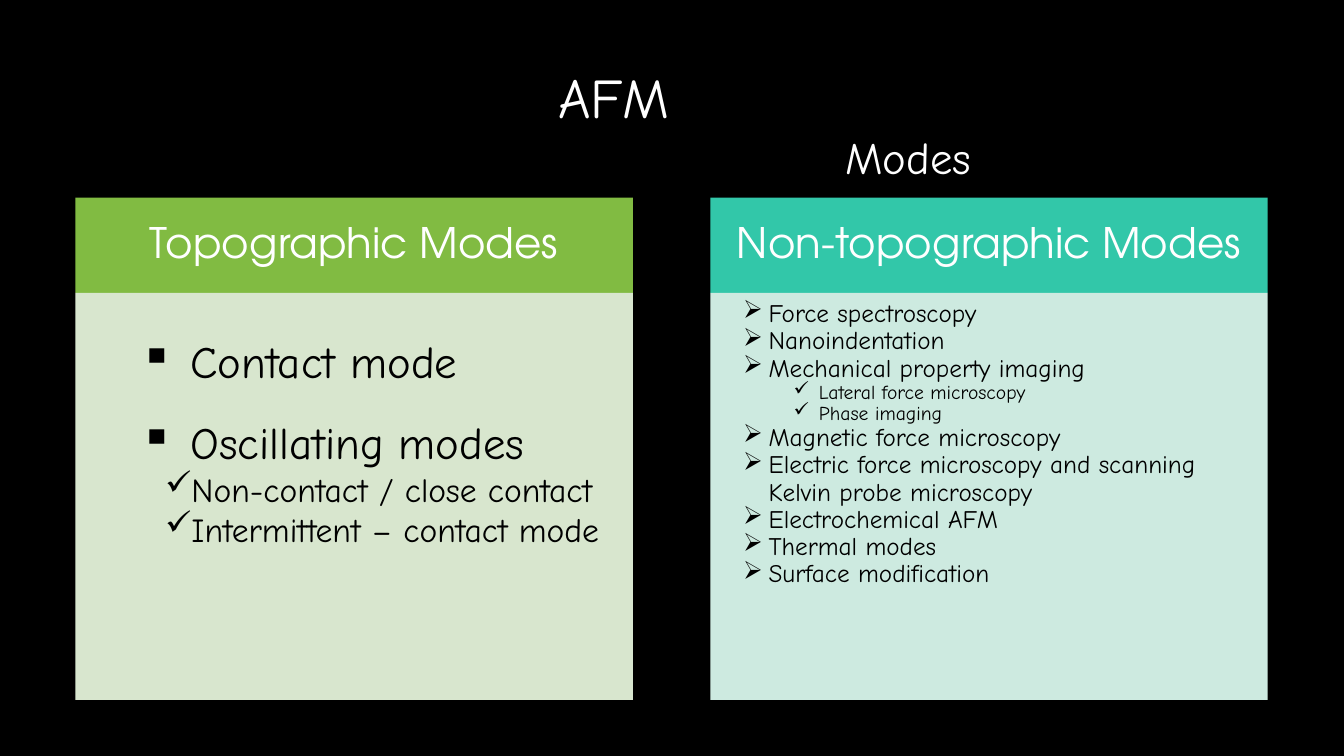
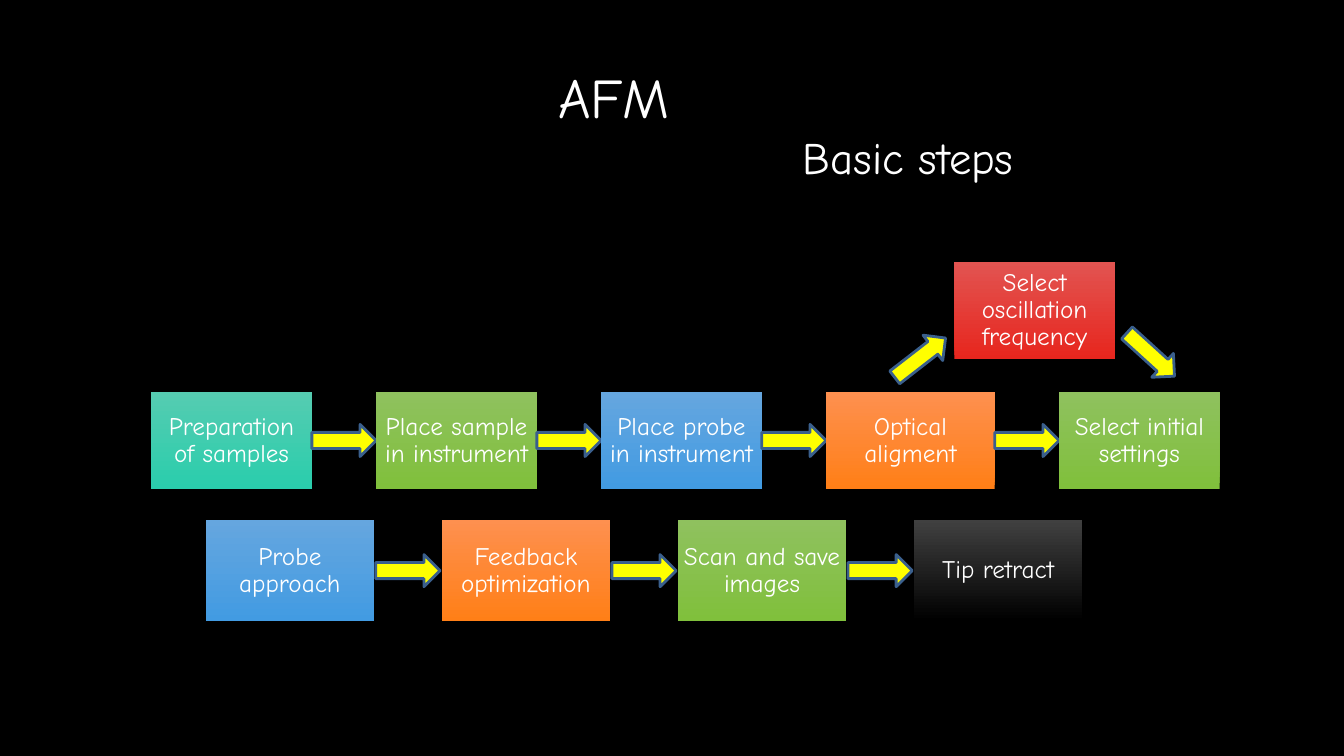
from lxml import etree
from pptx import Presentation
from pptx.dml.color import RGBColor
from pptx.enum.shapes import MSO_SHAPE
from pptx.enum.text import MSO_ANCHOR, PP_ALIGN
from pptx.oxml.ns import qn
from pptx.util import Cm, Pt

RECT, ARROW = MSO_SHAPE.RECTANGLE, MSO_SHAPE.RIGHT_ARROW
TOP, MIDDLE = MSO_ANCHOR.TOP, MSO_ANCHOR.MIDDLE
LEFT, CENTER = PP_ALIGN.LEFT, PP_ALIGN.CENTER

HAND, GEO = "Comic Neue", "TeX Gyre Adventor"

BLACK = RGBColor(0x00, 0x00, 0x00)
WHITE = RGBColor(0xFF, 0xFF, 0xFF)
YELLOW = RGBColor(0xFF, 0xFF, 0x00)
NAVY = RGBColor(0x3A, 0x5F, 0x8C)
LEAF = RGBColor(0x81, 0xBB, 0x42)
PALE_LEAF = RGBColor(0xD8, 0xE6, 0xCE)
MINT = RGBColor(0x32, 0xC7, 0xA9)
PALE_MINT = RGBColor(0xCD, 0xEA, 0xE0)

# Gradients run from the bottom colour to the top colour.
TEAL = RGBColor(0x2A, 0xCD, 0xAC), RGBColor(0x55, 0xCC, 0xB1)
GREEN = RGBColor(0x80, 0xC0, 0x3C), RGBColor(0x8F, 0xC1, 0x5E)
BLUE = RGBColor(0x42, 0x9B, 0xE2), RGBColor(0x65, 0xA6, 0xDF)
ORANGE = RGBColor(0xFF, 0x7F, 0x17), RGBColor(0xFE, 0x90, 0x4F)
RED = RGBColor(0xE7, 0x26, 0x1E), RGBColor(0xE2, 0x54, 0x51)
GREY = BLACK, RGBColor(0x40, 0x40, 0x40)

ARROW_W, ARROW_H = 1.62, 0.81


class Deck:
    def __init__(self):
        self.prs = Presentation()
        self.prs.slide_width, self.prs.slide_height = Cm(33.87), Cm(19.05)
        self.slide = None

    def start(self, topic):
        """Add a black slide with its two-line title."""
        self.slide = self.prs.slides.add_slide(self.prs.slide_layouts[6])
        fill = self.slide.background.fill
        fill.solid()
        fill.fore_color.rgb = BLACK
        box = self.slide.shapes.add_textbox(Cm(13.82), Cm(1.32), Cm(18.14), Cm(3.58))
        frame = self.frame(box, MIDDLE)
        self.para(frame, "AFM", 40, align=LEFT)
        self.para(frame, topic, 32)

    def frame(self, shape, anchor, insets=(0.25, 0.13, 0.25, 0.13)):
        frame = shape.text_frame
        frame.word_wrap = True
        frame.vertical_anchor = anchor
        (frame.margin_left, frame.margin_top,
         frame.margin_right, frame.margin_bottom) = map(Cm, insets)
        return frame

    def para(self, frame, text, size, color=WHITE, face=HAND, align=CENTER,
             space=1.0, bullet=None):
        """Add a paragraph; bullet is (symbol, margin, hang)."""
        first = frame.paragraphs[0]
        para = first if not first.runs else frame.add_paragraph()
        para.text = text
        para.alignment = align
        para.line_spacing = space
        if bullet:
            symbol, margin, hang = bullet
            props = para._p.get_or_add_pPr()
            props.set("marL", str(Cm(margin)))
            props.set("indent", str(-Cm(hang)))
            etree.SubElement(props, qn("a:buChar")).set("char", symbol)
        font = para.font
        font.name, font.size = face, Pt(size)
        font.color.rgb = color

    def shape(self, kind, left, top, width, height, color):
        """Add a borderless shape; a pair of colours makes a gradient."""
        shape = self.slide.shapes.add_shape(
            kind, Cm(left), Cm(top), Cm(width), Cm(height))
        shape.shadow.inherit = False
        shape.line.fill.background()
        if isinstance(color, RGBColor):
            shape.fill.solid()
            shape.fill.fore_color.rgb = color
        else:
            shape.fill.gradient()
            shape.fill.gradient_angle = 90
            for stop, shade in zip(shape.fill.gradient_stops, color):
                stop.color.rgb = shade
        return shape

    def panel(self, left, title, color, pale, insets, items):
        """Add a headed list; items are (text, size, spacing, bullet)."""
        head = self.shape(RECT, left, 4.98, 14.05, 2.4, color)
        frame = self.frame(head, MIDDLE, (0.58, 0.33, 0.58, 0.33))
        self.para(frame, title, 30, face=GEO, space=0.9)
        body = self.shape(RECT, left, 7.38, 14.05, 10.26, pale)
        frame = self.frame(body, TOP, insets)
        for text, size, space, bullet in items:
            self.para(frame, text, size, BLACK, align=LEFT, space=space, bullet=bullet)

    def step(self, left, top, width, height, text, color):
        box = self.shape(RECT, left, top, width, height, color)
        self.para(self.frame(box, MIDDLE, (0.13,) * 4), text, 18, space=0.9)

    def arrow(self, left, top, turn=0):
        arrow = self.shape(ARROW, left, top, ARROW_W, ARROW_H, YELLOW)
        arrow.line.color.rgb = NAVY
        arrow.line.width = Pt(2)
        arrow.rotation = turn

    def row(self, left, top, height, gap, steps):
        """Add steps side by side, with an arrow centred in each gap."""
        for index, (text, color, width) in enumerate(steps):
            if index:
                self.arrow(left - (gap + ARROW_W) / 2, top + (height - ARROW_H) / 2)
            self.step(left, top, width, height, text, color)
            left += width + gap


def modes(deck):
    deck.start("Modes")
    square, tick = ("▪", 2.54, 1.27), ("✓", 2.54, 0.64)
    point = ("➢", 1.27, 0.64)
    deck.panel(1.9, "Topographic Modes", LEAF, PALE_LEAF, (0.36, 0.36, 0.48, 0.53), [
        ("Contact mode", 32, 1.5, square),
        ("Oscillating modes", 32, 1.5, square),
        ("Non-contact / close contact", 24, 1.0, tick),
        ("Intermittent – contact mode", 24, 1.0, tick),
    ])
    main, sub = (18, 0.9, point), (14, 0.9, tick)
    deck.panel(17.9, "Non-topographic Modes", MINT, PALE_MINT, (0.2, 0.2, 0.28, 0.3), [
        ("Force spectroscopy", *main),
        ("Nanoindentation", *main),
        ("Mechanical property imaging", *main),
        ("Lateral force microscopy", *sub),
        ("Phase imaging", *sub),
        ("Magnetic force microscopy", *main),
        ("Electric force microscopy and scanning Kelvin probe microscopy", *main),
        ("Electrochemical AFM", *main),
        ("Thermal modes", *main),
        ("Surface modification", *main),
    ])


def steps(deck):
    deck.start("Basic steps")
    slim, wide = 4.05, 4.25
    deck.row(3.81, 9.88, 2.44, ARROW_W, [
        ("Preparation of samples", TEAL, slim),
        ("Place sample in instrument", GREEN, slim),
        ("Place probe in instrument", BLUE, slim),
        ("Optical aligment", ORANGE, wide),
        ("Select initial settings", GREEN, slim),
    ])
    deck.step(24.05, 6.6, slim, 2.44, "Select oscillation frequency", RED)
    deck.arrow(22.38, 8.61, 322.2)
    deck.arrow(28.19, 8.53, 42.3)
    deck.row(5.18, 13.11, 2.54, 1.7, [
        ("Probe approach", BLUE, wide),
        ("Feedback optimization", ORANGE, wide),
        ("Scan and save images", GREEN, wide),
        ("Tip retract", GREY, wide),
    ])


def main():
    deck = Deck()
    modes(deck)
    steps(deck)
    deck.prs.save("out.pptx")


if __name__ == "__main__":
    main()
